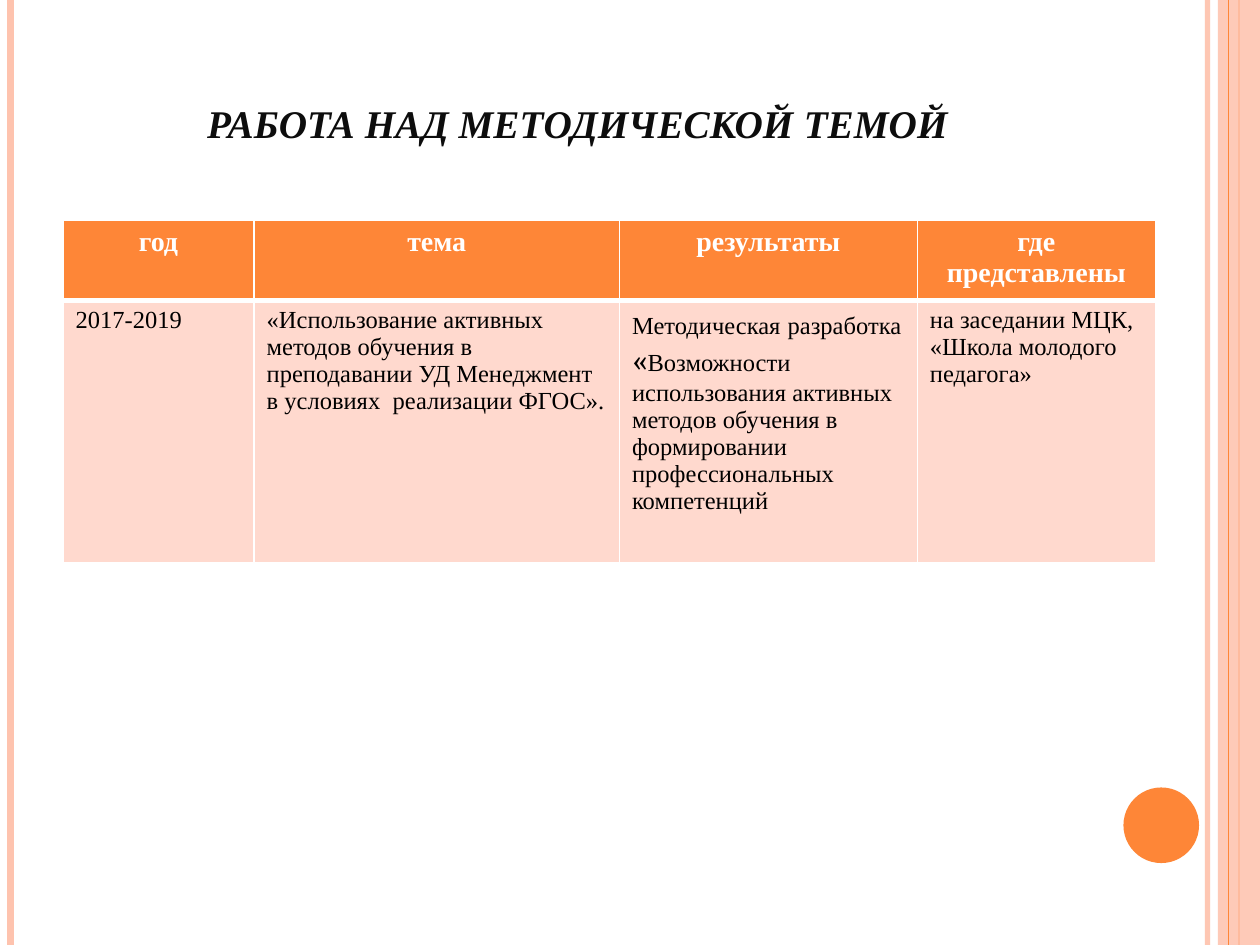
"""Build the slide about work on the methodical theme."""
from dataclasses import dataclass

from lxml import etree
from pptx import Presentation
from pptx.dml.color import RGBColor
from pptx.enum.shapes import MSO_CONNECTOR, MSO_SHAPE
from pptx.enum.text import MSO_ANCHOR, PP_ALIGN
from pptx.oxml.ns import qn
from pptx.util import Pt

STRAIGHT = MSO_CONNECTOR.STRAIGHT
RECTANGLE, OVAL = MSO_SHAPE.RECTANGLE, MSO_SHAPE.OVAL
BOTTOM = MSO_ANCHOR.BOTTOM
CENTER, LEFT = PP_ALIGN.CENTER, PP_ALIGN.LEFT


@dataclass(frozen=True)
class Theme:
    accent: str = "FE8637"
    pale: str = "FEC3AE"
    body_fill: str = "FFD9CE"
    white: str = "FFFFFF"
    black: str = "000000"
    title_color: str = "0D0D0D"
    font: str = "Times New Roman"
    gap_font: str = "Cambria"
    title_size: int = 28
    header_size: int = 16
    body_size: int = 14
    gap_size: int = 18


THEME = Theme()
PAGE_WIDTH, PAGE_HEIGHT = 720, 540
COLUMN_WIDTHS = (109.2, 208.8, 170.2, 136)
ROW_HEIGHTS = (42, 150)
HEADERS = ("год", "тема", "результаты", "где представлены")
ENTRIES = (
    ("2017-2019",),
    ("«Использование активных методов обучения в преподавании УД Менеджмент "
     "в условиях  реализации ФГОС».",),
    ("Методическая", " ", "разработка", " «",
     "Возможности использования активных методов обучения в формировании "
     "профессиональных компетенций"),
    ("на заседании МЦК, «Школа молодого педагога»",),
)


def set_opacity(fill, percent):
    color = fill._xPr.find(qn("a:solidFill"))[0]
    etree.SubElement(color, qn("a:alpha"), val=str(percent * 1000))


def add_stripe(page, x, color, width, opacity=100):
    stripe = page.shapes.add_connector(STRAIGHT, Pt(x), 0, Pt(x), Pt(PAGE_HEIGHT))
    stripe.line.color.rgb = RGBColor.from_string(color)
    stripe.line.width = Pt(width)
    if opacity < 100:
        set_opacity(stripe.line.fill, opacity)
    etree.SubElement(stripe._element.spPr, qn("a:effectLst"))


def add_plain_shape(page, kind, left, top, width, height, color, opacity=100):
    shape = page.shapes.add_shape(kind, Pt(left), Pt(top), Pt(width), Pt(height))
    shape.shadow.inherit = False
    shape.fill.solid()
    shape.fill.fore_color.rgb = RGBColor.from_string(color)
    shape.line.fill.background()
    if opacity < 100:
        set_opacity(shape.fill, opacity)


def style_font(font, size, color, bold=False):
    font.name = THEME.font
    font.size = Pt(size)
    font.bold = bold
    font.color.rgb = RGBColor.from_string(color)


def add_title(page, text):
    box = page.shapes.add_textbox(Pt(36), Pt(21.6), Pt(588), Pt(67))
    frame = box.text_frame
    frame.word_wrap = True
    frame.vertical_anchor = BOTTOM
    para = frame.paragraphs[0]
    para.alignment = CENTER
    style_font(para.font, THEME.title_size, THEME.title_color, True)
    para.font.italic = True
    span = para.add_run()
    span.text = text
    span._r.get_or_add_rPr().set("cap", "small")


def set_borders(cell, top, bottom):
    properties = cell._tc.get_or_add_tcPr()
    sides = (("L", 1), ("R", 1), ("T", top), ("B", bottom))
    for position, (side, width) in enumerate(sides):
        border = etree.Element(qn(f"a:ln{side}"), w=str(Pt(width)))
        fill = etree.SubElement(border, qn("a:solidFill"))
        etree.SubElement(fill, qn("a:srgbClr"), val=THEME.white)
        properties.insert(position, border)


def fill_cell(cell, texts, fill, size, color, bold, alignment):
    cell.fill.solid()
    cell.fill.fore_color.rgb = RGBColor.from_string(fill)
    para = cell.text_frame.paragraphs[0]
    para.alignment = alignment
    if len(texts) == 1:
        style_font(para.font, size, color, bold)
    for text in texts:
        span = para.add_run()
        span.text = text
        if len(texts) > 1:
            style_font(span.font, size, color, bold)
        if text.startswith(" "):
            span.font.name = THEME.gap_font
            span.font.size = Pt(THEME.gap_size)


def add_results_table(page):
    table = page.shapes.add_table(
        len(ROW_HEIGHTS), len(COLUMN_WIDTHS), Pt(36), Pt(126),
        Pt(sum(COLUMN_WIDTHS)), Pt(sum(ROW_HEIGHTS))).table
    for row, height in zip(table.rows, ROW_HEIGHTS):
        row.height = Pt(height)
    for index, width in enumerate(COLUMN_WIDTHS):
        table.columns[index].width = Pt(width)
        header, entry = table.cell(0, index), table.cell(1, index)
        fill_cell(header, (HEADERS[index],), THEME.accent,
                  THEME.header_size, THEME.white, True, CENTER)
        fill_cell(entry, ENTRIES[index], THEME.body_fill,
                  THEME.body_size, THEME.black, False, LEFT)
        set_borders(header, 1, 3)
        set_borders(entry, 3, 1)


def main():
    deck = Presentation()
    deck.slide_width, deck.slide_height = Pt(PAGE_WIDTH), Pt(PAGE_HEIGHT)
    page = deck.slides.add_slide(deck.slide_layouts[6])
    add_stripe(page, 690, THEME.pale, 3, 93)
    add_stripe(page, 6, THEME.pale, 4.5)
    add_stripe(page, 708, THEME.accent, 1.5)
    add_plain_shape(page, RECTANGLE, 696, 0, 24, PAGE_HEIGHT, THEME.pale, 87)
    add_stripe(page, 702, THEME.accent, 0.75)
    add_plain_shape(page, OVAL, 642, 450, 43.2, 43.2, THEME.accent)
    add_title(page, "работа над методической темой")
    add_results_table(page)
    deck.save("out.pptx")


if __name__ == "__main__":
    main()
